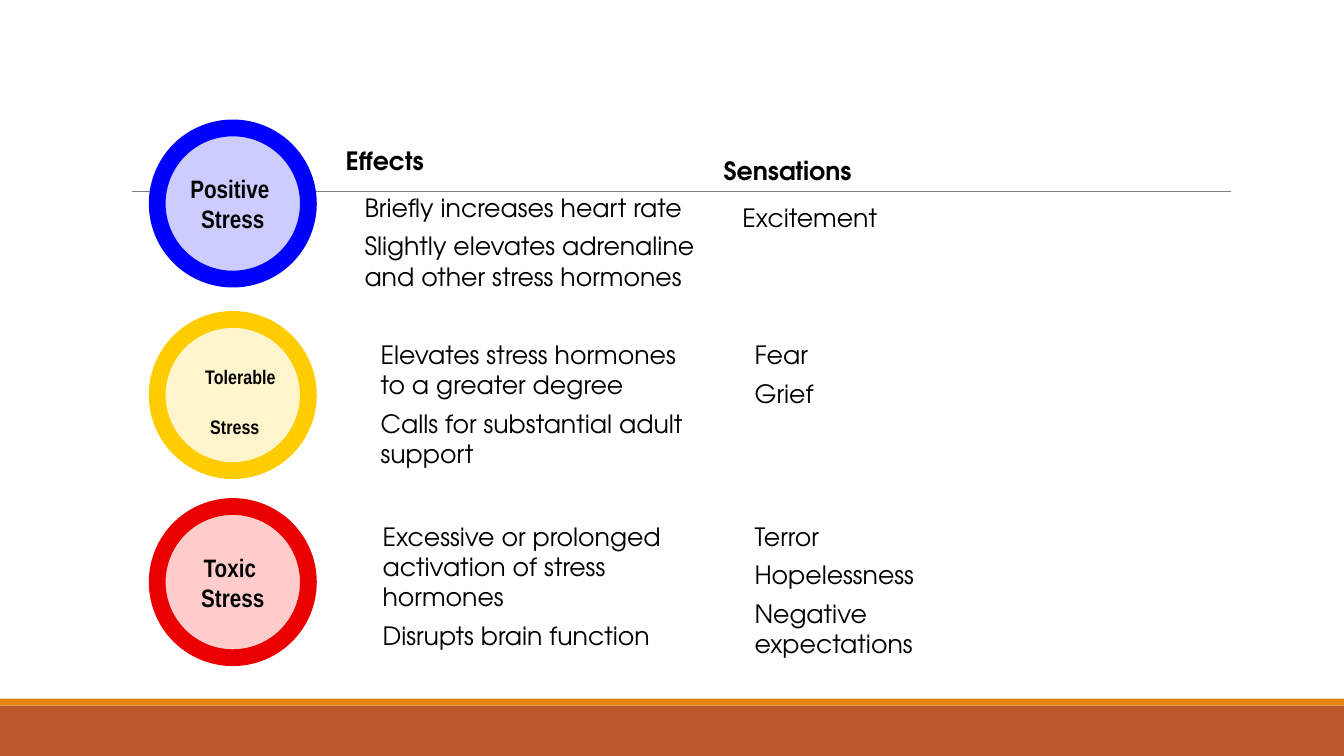
from lxml.etree import SubElement
from pptx import Presentation
from pptx.dml.color import RGBColor
from pptx.enum.shapes import MSO_CONNECTOR, MSO_SHAPE
from pptx.enum.text import MSO_ANCHOR, MSO_AUTO_SIZE, PP_ALIGN
from pptx.oxml.ns import qn
from pptx.util import Pt

COLORS = {
    "black": "000000", "rule": "808080", "band": "BD582C", "stripe": "E48312",
    "blue": "0000FF", "pale blue": "CCCCFF", "yellow": "FFCC00",
    "pale yellow": "FFF5CC", "red": "EA0000", "pale red": "FFCCCC",
}
LABEL_FONT, BODY_FONT = "Arial Narrow", "TeX Gyre Adventor"
SLIDE_W, SLIDE_H = 960, 540
RING_X, RING_D, RING_LINE = 112.3, 108, 12
BODY_SIZE, INDENT, HEADING_GAP, ITEM_GAP = 18, 13.5, 12, 6

BANDS = [("band", 504, 36), ("stripe", 499, 5)]

LEVELS = [
    {"top": 91.4, "ring": "blue", "fill": "pale blue", "drop": 0,
     "label": [("Positive \nStress", 18, 0, 0)],
     "columns": [
         ("Effects", (239.8, 100.1, 270, 113),
          ["Briefly increases heart rate",
           "Slightly elevates adrenaline and other stress hormones"]),
         ("Sensations", (509.8, 107.3, 127.4, 64), ["Excitement"])]},
    {"top": 228.2, "ring": "yellow", "fill": "pale yellow", "drop": 9,
     "label": [("Tolerable", 14, 11, 0), ("Stress", 14, 3, 19)],
     "columns": [
         (None, (251.3, 239, 255.6, 100.8),
          ["Elevates stress hormones to a greater degree",
           "Calls for substantial adult support"]),
         (None, (518.4, 239, 85.7, 56.9), ["Fear", "Grief"])]},
    {"top": 361.8, "ring": "red", "fill": "pale red", "drop": 0,
     "label": [("Toxic \nStress", 18, 0, 0)],
     "columns": [
         (None, (252.7, 368.6, 243.4, 100.8),
          ["Excessive or prolonged activation of stress hormones",
           "Disrupts brain function"]),
         (None, (518.4, 368.6, 225.4, 106.6),
          ["Terror", "Hopelessness", "Negative expectations"])]},
]


def rgb(name):
    return RGBColor.from_string(COLORS[name])


def write(tf, i, text, font, size, bold=False, indent=0, gap=0):
    p = tf.paragraphs[0] if i == 0 else tf.add_paragraph()
    p.text = text
    p.font.name, p.font.size, p.font.bold = font, Pt(size), bold
    p.font.color.rgb = rgb("black")
    p.space_before = Pt(gap)
    if indent:
        p._p.get_or_add_pPr().set("marL", str(Pt(indent)))
    return p


def add_ring(shapes, level):
    sp = shapes.add_shape(MSO_SHAPE.OVAL, Pt(RING_X), Pt(level["top"]), Pt(RING_D), Pt(RING_D))
    sp.shadow.inherit = False
    sp.fill.solid()
    sp.fill.fore_color.rgb = rgb(level["fill"])
    sp.line.color.rgb = rgb(level["ring"])
    sp.line.width = Pt(RING_LINE)
    tf = sp.text_frame
    tf.word_wrap = True
    tf.vertical_anchor = MSO_ANCHOR.MIDDLE
    tf.margin_top = Pt(3.6 + level["drop"])
    for i, (text, size, indent, gap) in enumerate(level["label"]):
        p = write(tf, i, text, LABEL_FONT, size, True, indent, gap)
        p.alignment = PP_ALIGN.CENTER


def add_column(shapes, heading, box, items):
    tf = shapes.add_textbox(*map(Pt, box)).text_frame
    tf.word_wrap = True
    tf.auto_size = MSO_AUTO_SIZE.SHAPE_TO_FIT_TEXT
    start = 0
    if heading:
        write(tf, 0, heading, BODY_FONT, BODY_SIZE, True)
        start = 1
    for i, item in enumerate(items):
        gap = ITEM_GAP if i else HEADING_GAP * start
        write(tf, start + i, item, BODY_FONT, BODY_SIZE, indent=INDENT, gap=gap)


def main():
    prs = Presentation()
    prs.slide_width, prs.slide_height = Pt(SLIDE_W), Pt(SLIDE_H)
    s = prs.slides.add_slide(prs.slide_layouts[6])

    for color, top, height in BANDS:
        sp = s.shapes.add_shape(MSO_SHAPE.RECTANGLE, 0, Pt(top), Pt(SLIDE_W), Pt(height))
        sp.shadow.inherit = False
        sp.fill.solid()
        sp.fill.fore_color.rgb = rgb(color)
        sp.line.fill.background()

    rule = s.shapes.add_connector(MSO_CONNECTOR.STRAIGHT, Pt(94.3), Pt(136.8), Pt(879), Pt(136.8))
    rule.line.color.rgb = rgb("rule")
    rule.line.width = Pt(0.5)
    SubElement(rule._element.spPr, qn("a:effectLst"))

    for level in LEVELS:
        shapes = s.shapes.add_group_shape().shapes
        add_ring(shapes, level)
        for column in level["columns"]:
            add_column(shapes, *column)

    prs.save("out.pptx")


if __name__ == "__main__":
    main()
